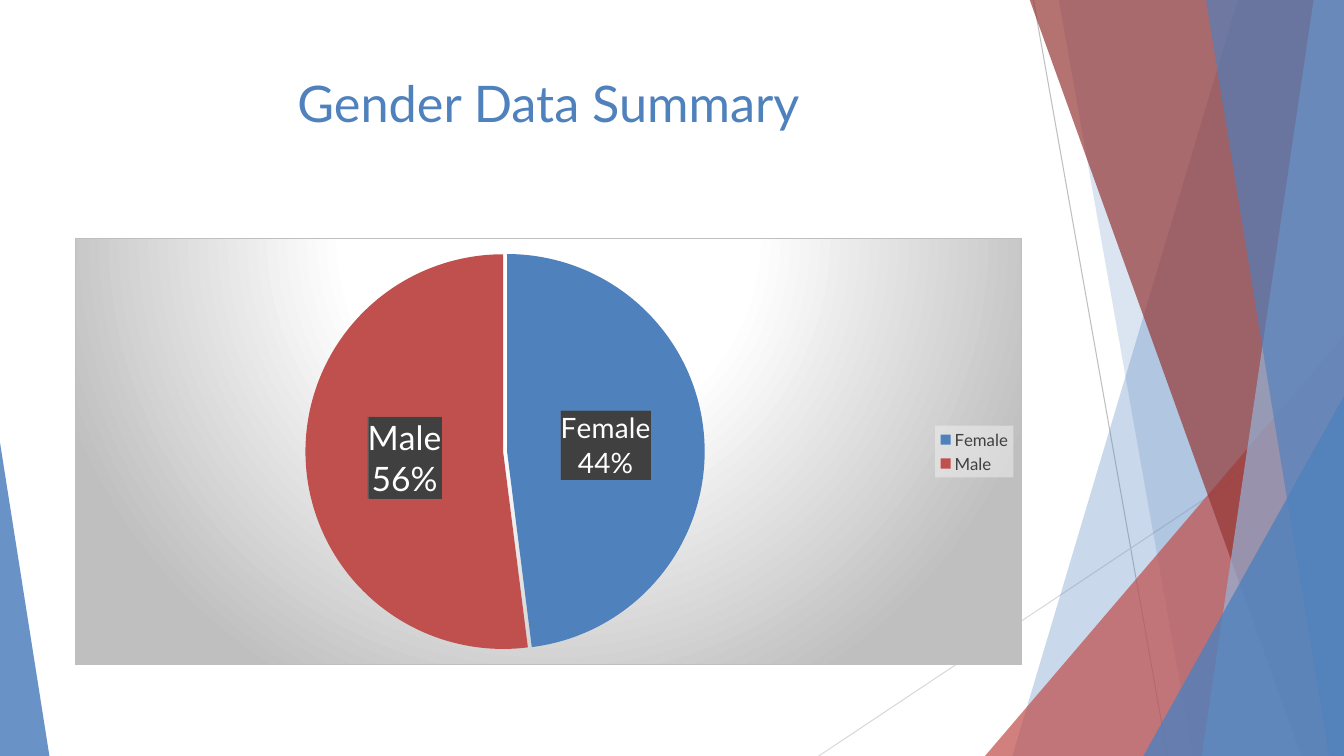
from lxml.etree import SubElement
from pptx import Presentation
from pptx.chart.data import CategoryChartData
from pptx.dml.color import RGBColor
from pptx.enum.chart import XL_CHART_TYPE, XL_LABEL_POSITION, XL_LEGEND_POSITION
from pptx.enum.shapes import MSO_CONNECTOR, MSO_SHAPE
from pptx.enum.text import MSO_ANCHOR, PP_ALIGN
from pptx.oxml import parse_xml
from pptx.oxml.ns import nsdecls, qn
from pptx.util import Inches, Pt

THEME = {
    "font": "Lato",
    "blue": "4F81BD", "light_blue": "95B3D7",
    "red": "C0504D", "dark_red": "953735",
    "grey": "BFBFBF", "light_grey": "D9D9D9", "pale": "F2F2F2",
    "dark": "404040", "pattern": "595959", "white": "FFFFFF",
    "title": 36, "legend": 12, "female": 20, "male": 24,
}


def set_font(font, size, color):
    values = {"name": THEME["font"], "size": Pt(THEME[size]), "bold": False}
    for name, value in values.items():
        setattr(font, name, value)
    font.color.rgb = RGBColor.from_string(THEME[color])


def paint(sp, color, alpha):
    sp.shadow.inherit = False
    sp.fill.solid()
    sp.fill.fore_color.rgb = RGBColor.from_string(THEME[color])
    sp.line.fill.background()
    rgb = sp.fill._xPr.find(qn("a:solidFill"))[0]
    SubElement(rgb, qn("a:alpha"), val=str(alpha * 1000))


prs = Presentation()
prs.slide_width, prs.slide_height = Inches(13.33), Inches(7.5)
s = prs.slides.add_slide(prs.slide_layouts[5])

# Thin lines behind the facets
for x1, y1, x2, y2, color in [
    (10.25, 0, 11.58, 7.5, "grey"),
    (13.33, 4.03, 8.12, 7.5, "light_grey"),
]:
    line = s.shapes.add_connector(MSO_CONNECTOR.STRAIGHT, Inches(x1), Inches(y1),
                                  Inches(x2), Inches(y2))
    line.line.color.rgb = RGBColor.from_string(THEME[color])
    line.line.width = Pt(0.75)
    SubElement(line._element.spPr, qn("a:effectLst"))

# Facets: bands run from the top to the bottom along the right edge,
# triangles stand on the bottom edge with the apex at one side
RIGHT, TOP, BOTTOM = 13.33, -0.01, 7.5
facets = [
    ("band", (12.28, 10.04), "blue", 30),
    ("band", (10.5, 11.83), "blue", 20),
    ("triangle", (9.77, 3.33, 3.56, 1), "red", 72),
    ("band", (10.21, 12.91), "dark_red", 70),
    ("band", (13.03, 11.92), "light_blue", 70),
    ("band", (11.96, 13.18), "blue", 65),
    ("triangle", (11.34, 3.93, 1.99, 1), "blue", 80),
    ("triangle", (0, 4.39, 0.49, 0), "blue", 85),
]
for kind, geometry, color, alpha in facets:
    if kind == "band":
        top_x, bottom_x = geometry
        outline = s.shapes.build_freeform(Inches(top_x), Inches(TOP))
        corners = [(RIGHT, TOP), (RIGHT, BOTTOM), (bottom_x, BOTTOM)]
        outline.add_line_segments([(Inches(x), Inches(y)) for x, y in corners])
        sp = outline.convert_to_shape()
    else:
        x, y, width, apex = geometry
        sp = s.shapes.add_shape(MSO_SHAPE.ISOSCELES_TRIANGLE, Inches(x), Inches(y),
                                Inches(width), Inches(BOTTOM - y))
        sp.adjustments[0] = apex
    paint(sp, color, alpha)

# Title
title = s.shapes.title
title.left, title.top = Inches(0.74), Inches(0.67)
title.width, title.height = Inches(9.4), Inches(1.44)
tf = title.text_frame
tf.text = "Gender Data Summary"
tf.vertical_anchor = MSO_ANCHOR.TOP
p = tf.paragraphs[0]
p.alignment = PP_ALIGN.CENTER
set_font(p.runs[0].font, "title", "blue")

# Pie chart
data = CategoryChartData()
data.categories = ["Female", "Male"]
data.add_series("Series 1", (48, 52))
chart = s.shapes.add_chart(XL_CHART_TYPE.PIE, Inches(0.74), Inches(2.36),
                           Inches(9.4), Inches(4.24), data).chart
chart.has_title = False
chart.font.name = THEME["font"]
chart.has_legend = True
legend = chart.legend
legend.position = XL_LEGEND_POSITION.RIGHT
legend.include_in_layout = False
set_font(legend.font, "legend", "dark")

# Slices with their labels
plot = chart.plots[0]
plot.vary_by_categories = True
series = plot.series[0]
slices = [("blue", "Female\n44%", "female"), ("red", "Male\n56%", "male")]
for i, (color, text, size) in enumerate(slices):
    point = series.points[i]
    point.format.fill.solid()
    point.format.fill.fore_color.rgb = RGBColor.from_string(THEME[color])
    point.format.line.fill.background()
    label = point.data_label
    label.text_frame.text = text
    for p in label.text_frame.paragraphs:
        set_font(p.runs[0].font, size, "white")
    label.position = XL_LABEL_POSITION.CENTER
series._element.find(qn("c:dPt")).addprevious(
    parse_xml(f'<c:explosion {nsdecls("c")} val="1"/>'))

# Fills of the chart area, the legend and the labels
stops = "".join(f'<a:gs pos="{pos}"><a:srgbClr val="{THEME[color]}"/></a:gs>'
                for pos, color in [(0, "white"), (39000, "white"), (100000, "grey")])
area_fill = (f'<a:gradFill><a:gsLst>{stops}</a:gsLst><a:path path="circle">'
             '<a:fillToRect l="50000" t="-80000" r="50000" b="180000"/></a:path></a:gradFill>'
             f'<a:ln w="9525"><a:solidFill><a:srgbClr val="{THEME["grey"]}"/></a:solidFill></a:ln>')
legend_fill = (f'<a:solidFill><a:srgbClr val="{THEME["pale"]}"><a:alpha val="50000"/>'
               '</a:srgbClr></a:solidFill>')
label_fill = (f'<a:pattFill prst="dkVert"><a:fgClr><a:srgbClr val="{THEME["dark"]}"/></a:fgClr>'
              f'<a:bgClr><a:srgbClr val="{THEME["pattern"]}"/></a:bgClr></a:pattFill>')
space = chart._chartSpace
fills = [(space.find(qn("c:chart")), area_fill),
         (legend._element.find(qn("c:overlay")), legend_fill)]
fills += [(tx, label_fill) for tx in space.iterfind(f'.//{qn("c:dLbl")}/{qn("c:tx")}')]
for previous, fill in fills:
    previous.addnext(parse_xml(f'<c:spPr {nsdecls("c", "a")}>{fill}</c:spPr>'))

prs.save("out.pptx")
